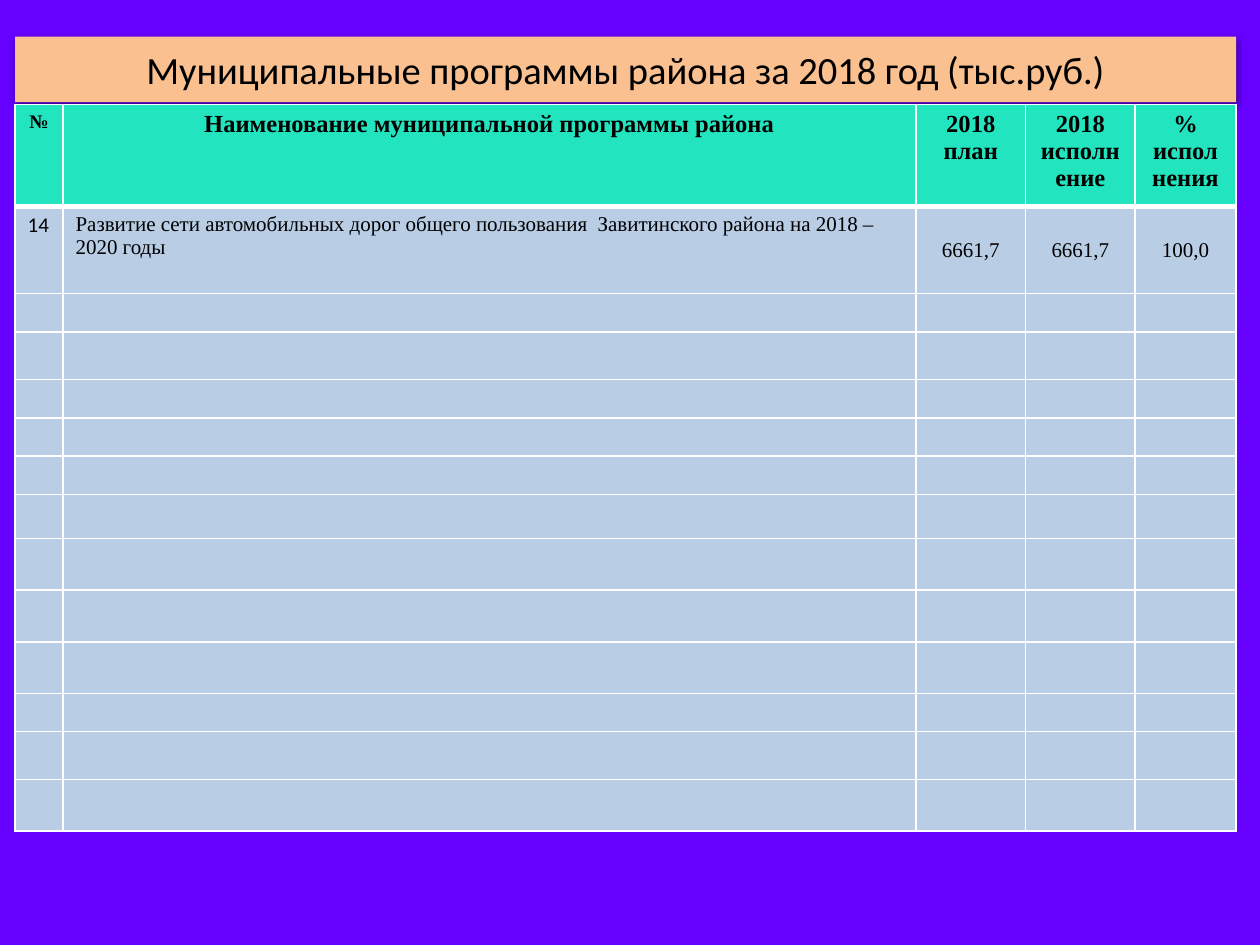
import lxml.etree
import pptx
import pptx.dml.color
import pptx.enum.text
import pptx.oxml
import pptx.oxml.ns
import pptx.util

Inches = pptx.util.Inches
Pt = pptx.util.Pt
ALIGN = pptx.enum.text.PP_ALIGN
ANCHOR = pptx.enum.text.MSO_ANCHOR
qn = pptx.oxml.ns.qn

COLORS = {
    "background": "6600FF",
    "title": "FAC090",
    "header": "22E4BF",
    "body": "B9CDE5",
    "border": "FFFFFF",
    "text": "000000",
}
SERIF = "Times New Roman"
COLUMN_WIDTHS = [0.38, 6.77, 0.87, 0.87, 0.8]
ROW_HEIGHTS = [0.81, 0.69, 0.3, 0.38, 0.3, 0.3, 0.3, 0.35, 0.41, 0.41, 0.41, 0.3, 0.38, 0.41]
HEADERS = ["№", "Наименование муниципальной программы района", "2018 план", "2018 исполнение", "% исполнения"]
PROGRAM = [
    "14",
    "Развитие сети автомобильных дорог общего пользования  Завитинского района на 2018 – 2020 годы",
    "6661,7",
    "6661,7",
    "100,0",
]


def set_fill(fill, name):
    """Apply a solid palette colour to a fill."""
    fill.solid()
    fill.fore_color.rgb = pptx.dml.color.RGBColor.from_string(COLORS[name])


def write_text(frame, text, size=12, font=SERIF, bold=False, align=ALIGN.LEFT):
    """Write one formatted paragraph into a text frame."""
    paragraph = frame.paragraphs[0]
    paragraph.alignment = align
    run = paragraph.add_run()
    run.text = text
    run.font.size = Pt(size)
    run.font.name = font
    run.font.bold = bold
    run.font.color.rgb = pptx.dml.color.RGBColor.from_string(COLORS["text"])


def add_shadow(shape, blur, distance, alpha):
    """Give a shape a soft shadow that falls downwards."""
    effects = lxml.etree.SubElement(shape.element.spPr, qn("a:effectLst"))
    shadow = lxml.etree.SubElement(
        effects, qn("a:outerShdw"), blurRad=str(Pt(blur)), dist=str(Pt(distance)), dir="5400000", rotWithShape="0"
    )
    color = lxml.etree.SubElement(shadow, qn("a:srgbClr"), val=COLORS["text"])
    lxml.etree.SubElement(color, qn("a:alpha"), val=str(alpha * 1000))


def set_borders(cell, top=1, bottom=1):
    """Draw the four borders of a cell with widths in points."""
    properties = cell._tc.get_or_add_tcPr()
    for index, (side, width) in enumerate([("L", 1), ("R", 1), ("T", top), ("B", bottom)]):
        line = lxml.etree.Element(qn(f"a:ln{side}"), w=str(Pt(width)))
        fill = lxml.etree.SubElement(line, qn("a:solidFill"))
        lxml.etree.SubElement(fill, qn("a:srgbClr"), val=COLORS["border"])
        properties.insert(index, line)


def build_title(slide, left, top, width, height):
    """Turn the title placeholder into a rounded bar."""
    title = slide.shapes.title
    title.left, title.top, title.width, title.height = left, top, width, height
    geometry = lxml.etree.SubElement(title.element.spPr, qn("a:prstGeom"), prst="roundRect")
    lxml.etree.SubElement(geometry, qn("a:avLst"))
    set_fill(title.fill, "title")
    title.line.fill.background()
    add_shadow(title, blur=3.1, distance=1.6, alpha=38)
    title.text_frame.word_wrap = True
    title.text_frame.vertical_anchor = ANCHOR.MIDDLE
    write_text(
        title.text_frame,
        "Муниципальные программы района за 2018 год (тыс.руб.)",
        size=22,
        font="Calibri",
        align=ALIGN.CENTER,
    )


def fill_header(table):
    """Write the column headings."""
    for column, text in enumerate(HEADERS):
        write_text(
            table.cell(0, column).text_frame, text, size=14 if column else 11, bold=True, align=ALIGN.CENTER
        )


def fill_program(table):
    """Write the programme row with its centred figures."""
    for column, text in enumerate(PROGRAM):
        cell = table.cell(1, column)
        is_figure = column > 1
        if is_figure:
            cell.vertical_anchor = ANCHOR.MIDDLE
            cell.margin_left = cell.margin_right = cell.margin_top = Inches(0.01)
            cell.margin_bottom = 0
        write_text(
            cell.text_frame,
            text,
            font=SERIF if column else "Calibri",
            align=ALIGN.CENTER if is_figure else ALIGN.LEFT,
        )


def build_table(slide, left, top, width, height):
    """Add the programmes table with its header and blank rows."""
    table = slide.shapes.add_table(len(ROW_HEIGHTS), len(COLUMN_WIDTHS), left, top, width, height).table
    for column, column_width in zip(table.columns, COLUMN_WIDTHS):
        column.width = Inches(column_width)
    for index, (row, row_height) in enumerate(zip(table.rows, ROW_HEIGHTS)):
        row.height = Inches(row_height)
        for cell in row.cells:
            set_fill(cell.fill, "body" if index else "header")
            set_borders(cell, top=3 if index == 1 else 1, bottom=1 if index else 3)
            if index > 1:
                paragraph = cell.text_frame.paragraphs[0]
                lxml.etree.SubElement(paragraph._p, qn("a:endParaRPr"), sz="1200")
    fill_header(table)
    fill_program(table)


def main():
    """Build and save the presentation."""
    presentation = pptx.Presentation()
    presentation.slide_width = Inches(10)
    presentation.slide_height = Inches(7.5)
    slide = presentation.slides.add_slide(presentation.slide_layouts[5])
    set_fill(slide.background.fill, "background")
    left, width = Inches(0.12), Inches(9.69)
    build_title(slide, left, Inches(0.29), width, Inches(0.52))
    build_table(slide, left, Inches(0.83), width, Inches(sum(ROW_HEIGHTS)))
    presentation.save("out.pptx")


if __name__ == "__main__":
    main()
